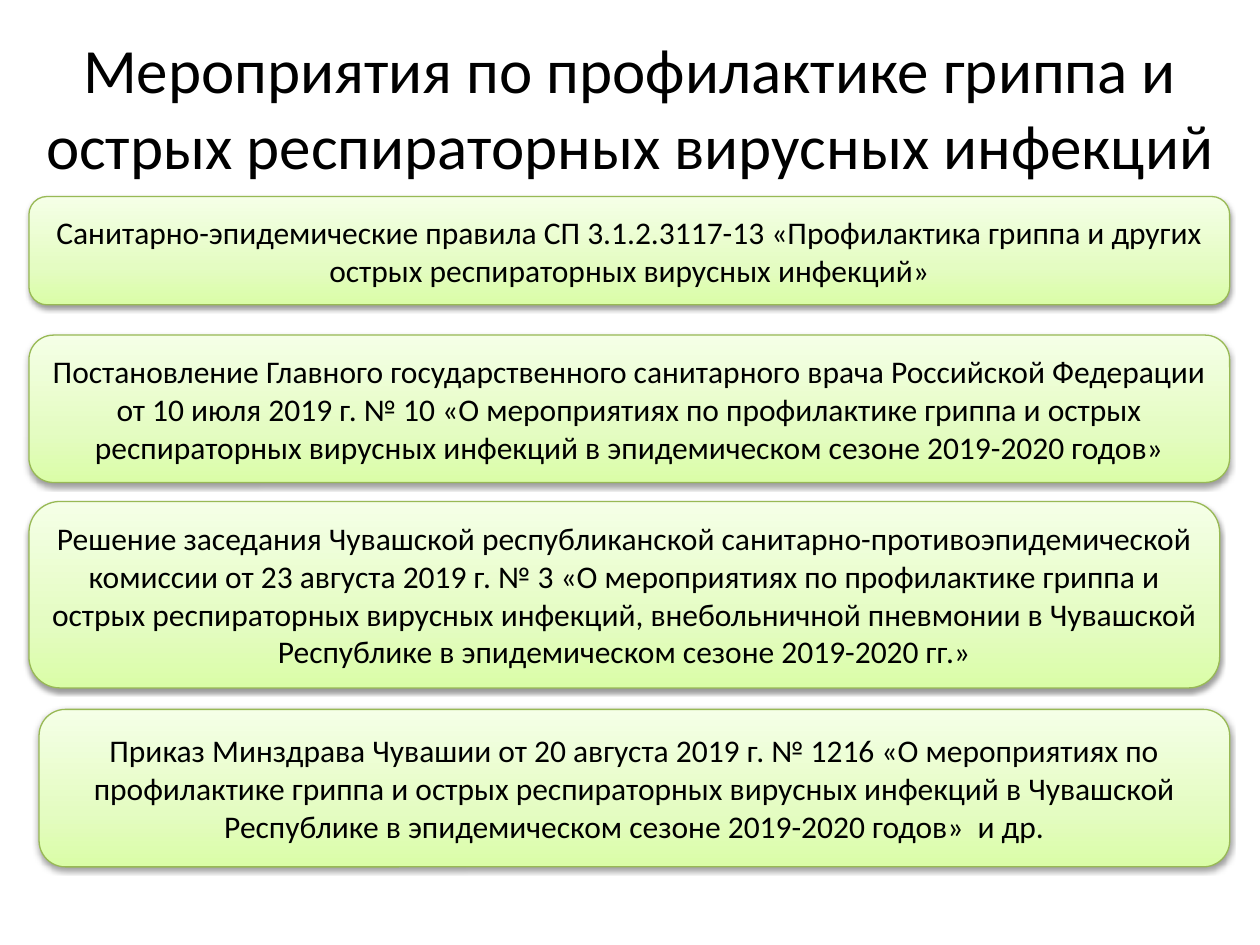
from copy import deepcopy

from lxml import etree
from pptx import Presentation
from pptx import util as u
from pptx.dml.color import RGBColor
from pptx.enum import shapes, text
from pptx.oxml.ns import qn

W, H = 10, 7.5
FONT = "Calibri"
COLORS = {
    "text": "000000",
    "border": "98B955",
    "bottom": "DAFDA7",
    "middle": "E4FCC2",
    "top": "F5FFE7",
    "shadow": "000000",
}
TITLE = "Мероприятия по профилактике гриппа и острых респираторных вирусных инфекций"

# Left, top, width, height in inches, then the wording
DOCUMENTS = [
    ((0.23, 1.56, 9.53, 0.86),
     "Санитарно-эпидемические правила СП 3.1.2.3117-13 «Профилактика гриппа и других "
     "острых респираторных вирусных инфекций»"),
    ((0.23, 2.66, 9.53, 1.17),
     "Постановление Главного государственного санитарного врача Российской Федерации "
     "от 10 июля 2019 г. № 10 «О мероприятиях по профилактике гриппа и острых "
     "респираторных вирусных инфекций в эпидемическом сезоне 2019-2020 годов»"),
    ((0.23, 3.98, 9.45, 1.48),
     "Решение заседания Чувашской республиканской санитарно-противоэпидемической "
     "комиссии от 23 августа 2019 г. № 3 «О мероприятиях по профилактике гриппа и "
     "острых респираторных вирусных инфекций, внебольничной пневмонии в Чувашской "
     "Республике в эпидемическом сезоне 2019-2020 гг.»"),
    ((0.31, 5.63, 9.45, 1.25),
     "Приказ Минздрава Чувашии от 20 августа 2019 г. № 1216 «О мероприятиях по "
     "профилактике гриппа и острых респираторных вирусных инфекций в Чувашской "
     "Республике в эпидемическом сезоне 2019-2020 годов»  и др."),
]


def color(name):
    return RGBColor.from_string(COLORS[name])


def write(sp, words, size):
    """Centre one paragraph in the shape."""
    tf = sp.text_frame
    tf.word_wrap = True
    tf.vertical_anchor = text.MSO_ANCHOR.MIDDLE
    p = tf.paragraphs[0]
    p.text = words
    p.alignment = text.PP_ALIGN.CENTER
    p.font.name, p.font.size = FONT, u.Pt(size)
    p.font.color.rgb = color("text")


def fill_gradient(sp):
    """Three greens, from the bottom edge upwards."""
    sp.fill.gradient()
    sp.fill.gradient_angle = 90
    first = sp.fill._fill._gradFill.find(qn("a:gsLst"))[0]
    first.addnext(deepcopy(first))
    greens = [("bottom", 0), ("middle", 0.35), ("top", 1)]
    for stop, (name, position) in zip(sp.fill.gradient_stops, greens):
        stop.color.rgb = color(name)
        stop.position = position


def add_shadow(sp):
    """Soft shadow straight below the shape."""
    sp.shadow.inherit = False
    effects = sp._element.spPr.find(qn("a:effectLst"))
    outer = etree.SubElement(effects, qn("a:outerShdw"), blurRad="40000",
                             dist="20000", dir="5400000", rotWithShape="0")
    tint = etree.SubElement(outer, qn("a:srgbClr"), val=COLORS["shadow"])
    etree.SubElement(tint, qn("a:alpha"), val="38000")


def add_title(s, box):
    sp = s.shapes.title
    sp.left, sp.top, sp.width, sp.height = map(u.Inches, box)
    write(sp, TITLE, 36)


def add_document(s, box, words):
    sp = s.shapes.add_shape(shapes.MSO_SHAPE.ROUNDED_RECTANGLE, *map(u.Inches, box))
    fill_gradient(sp)
    sp.line.color.rgb = color("border")
    sp.line.width = u.Pt(0.75)
    add_shadow(sp)
    write(sp, words, 18)


def main():
    prs = Presentation()
    prs.slide_width, prs.slide_height = u.Inches(W), u.Inches(H)
    s = prs.slides.add_slide(prs.slide_layouts[5])

    # Heading across the full width
    add_title(s, (0, 0.04 * H, W, 1.09))

    # Stack of regulatory documents
    for box, words in DOCUMENTS:
        add_document(s, box, words)

    prs.save("out.pptx")


if __name__ == "__main__":
    main()
